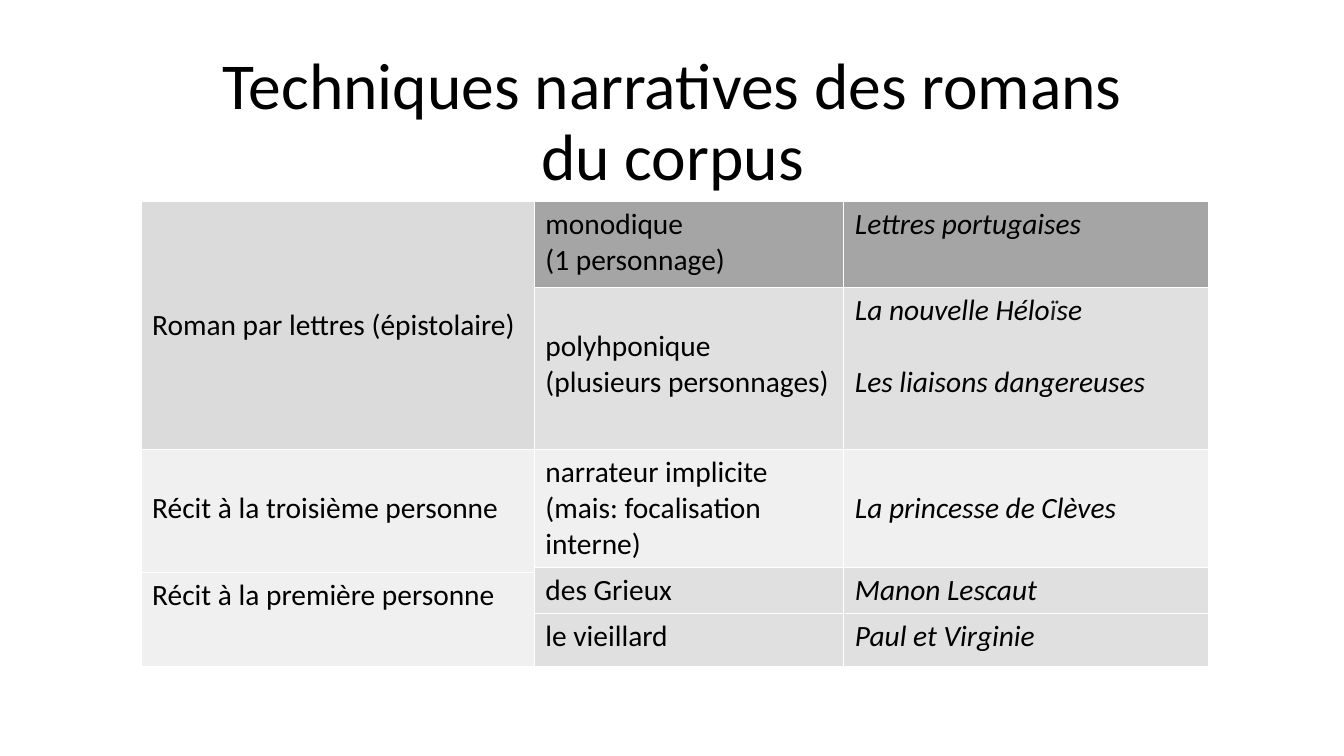
from lxml.etree import SubElement
from pptx import Presentation
from pptx.dml.color import RGBColor
from pptx.enum.text import MSO_ANCHOR as Anchor, MSO_AUTO_SIZE as AutoSize, PP_ALIGN as Align
from pptx.oxml.ns import qn
from pptx.util import Inches, Pt

BLACK = RGBColor(0x00, 0x00, 0x00)
INK = RGBColor(0x20, 0x21, 0x22)
WHITE = RGBColor(0xFF, 0xFF, 0xFF)
DARK = RGBColor(0xA5, 0xA5, 0xA5)
MEDIUM = RGBColor(0xDB, 0xDB, 0xDB)
LIGHT = RGBColor(0xE0, 0xE0, 0xE0)
PALE = RGBColor(0xF0, 0xF0, 0xF0)

FONT = "Calibri"
TEXT_SIZE = 21
LINE_POINTS = 25.6
LINE_INCHES = 0.36
COLUMNS = [3.9, 3.07, 3.62]
ROWS = [0.85, 1.61, 1.17, 0.05, 0.41, 0.52]
MERGES = [(0, 0, 1), (2, 0, 3), (4, 0, 5), (3, 1, 4), (3, 2, 4)]

CELLS = [
    (0, 0, ["Roman par lettres (épistolaire)"], MEDIUM, {"vertical_anchor": Anchor.MIDDLE}),
    (0, 1, ["monodique", "(1 personnage)"], DARK, {}),
    (0, 2, ["Lettres portugaises"], DARK, {}),
    (1, 1, ["polyhponique", "(plusieurs personnages)"], LIGHT, {"lines_above": 1}),
    (1, 2, ["La nouvelle Héloïse", "Les liaisons dangereuses"], LIGHT, {"gap": LINE_POINTS}),
    (2, 0, ["Récit à la troisième personne"], PALE, {"lines_above": 1}),
    (2, 1, ["narrateur implicite", "(mais: focalisation interne)"], PALE, {}),
    (2, 2, ["La princesse de Clèves"], PALE, {"lines_above": 1}),
    (3, 1, ["des Grieux"], LIGHT, {}),
    (3, 2, ["Manon Lescaut"], LIGHT, {}),
    (4, 0, ["Récit à la première personne"], PALE, {}),
    (5, 1, ["le vieillard"], LIGHT, {}),
    (5, 2, ["Paul et Virginie"], LIGHT, {}),
]


def apply(target, values):
    for name, value in values.items():
        setattr(target, name, value)


def style_font(font, size, color=BLACK, italic=False):
    apply(font, {"name": FONT, "size": Pt(size), "italic": italic, "bold": False})
    font.color.rgb = color


def add_title(slide, text):
    title = slide.shapes.title
    apply(title, {"left": Inches(0.92), "top": Inches(0.61),
                  "width": Inches(11.5), "height": Inches(1.24)})
    frame = title.text_frame
    frame.text = text
    apply(frame, {"word_wrap": True, "auto_size": AutoSize.NONE,
                  "vertical_anchor": Anchor.MIDDLE})
    para = frame.paragraphs[0]
    apply(para, {"alignment": Align.CENTER, "line_spacing": 0.9})
    for span in para.runs:
        style_font(span.font, 46.8)


def set_borders(cell):
    properties = cell._tc.get_or_add_tcPr()
    for position, side in enumerate(["lnL", "lnR", "lnT", "lnB"]):
        line = SubElement(properties, qn(f"a:{side}"), w=str(Pt(0.96)))
        fill = SubElement(line, qn("a:solidFill"))
        SubElement(fill, qn("a:srgbClr"), val=str(WHITE))
        properties.remove(line)
        properties.insert(position, line)


def fill_cell(cell, lines, color, italic, lines_above=0, gap=0, vertical_anchor=Anchor.TOP):
    cell.fill.solid()
    cell.fill.fore_color.rgb = color
    apply(cell, {"margin_left": Inches(0.11), "margin_right": Inches(0.11),
                 "margin_top": Inches(0.05 + LINE_INCHES * lines_above),
                 "margin_bottom": Inches(0.05), "vertical_anchor": vertical_anchor})
    frame = cell.text_frame
    for index, text in enumerate(lines):
        para = frame.add_paragraph() if index else frame.paragraphs[0]
        if index and gap:
            para.space_before = Pt(gap)
        for part in filter(None, text.partition("ï")):
            span = para.add_run()
            span.text = part
            style_font(span.font, TEXT_SIZE, INK if part == "ï" else BLACK, italic)


def add_novel_table(slide):
    table = slide.shapes.add_table(len(ROWS), len(COLUMNS), Inches(1.4), Inches(2),
                                   Inches(sum(COLUMNS)), Inches(sum(ROWS))).table
    apply(table, {"first_row": False, "horz_banding": False})
    for column, width in zip(table.columns, COLUMNS):
        column.width = Inches(width)
    for row, height in zip(table.rows, ROWS):
        row.height = Inches(height)
    for first, column, last in MERGES:
        table.cell(first, column).merge(table.cell(last, column))
    for row, column, lines, color, options in CELLS:
        fill_cell(table.cell(row, column), lines, color, column == 2, **options)
    for cell in table.iter_cells():
        set_borders(cell)


def main():
    deck = Presentation()
    apply(deck, {"slide_width": Inches(13.33), "slide_height": Inches(7.5)})
    slide = deck.slides.add_slide(deck.slide_layouts[5])
    add_title(slide, "Techniques narratives des romans\vdu corpus")
    add_novel_table(slide)
    deck.save("out.pptx")


if __name__ == "__main__":
    main()
